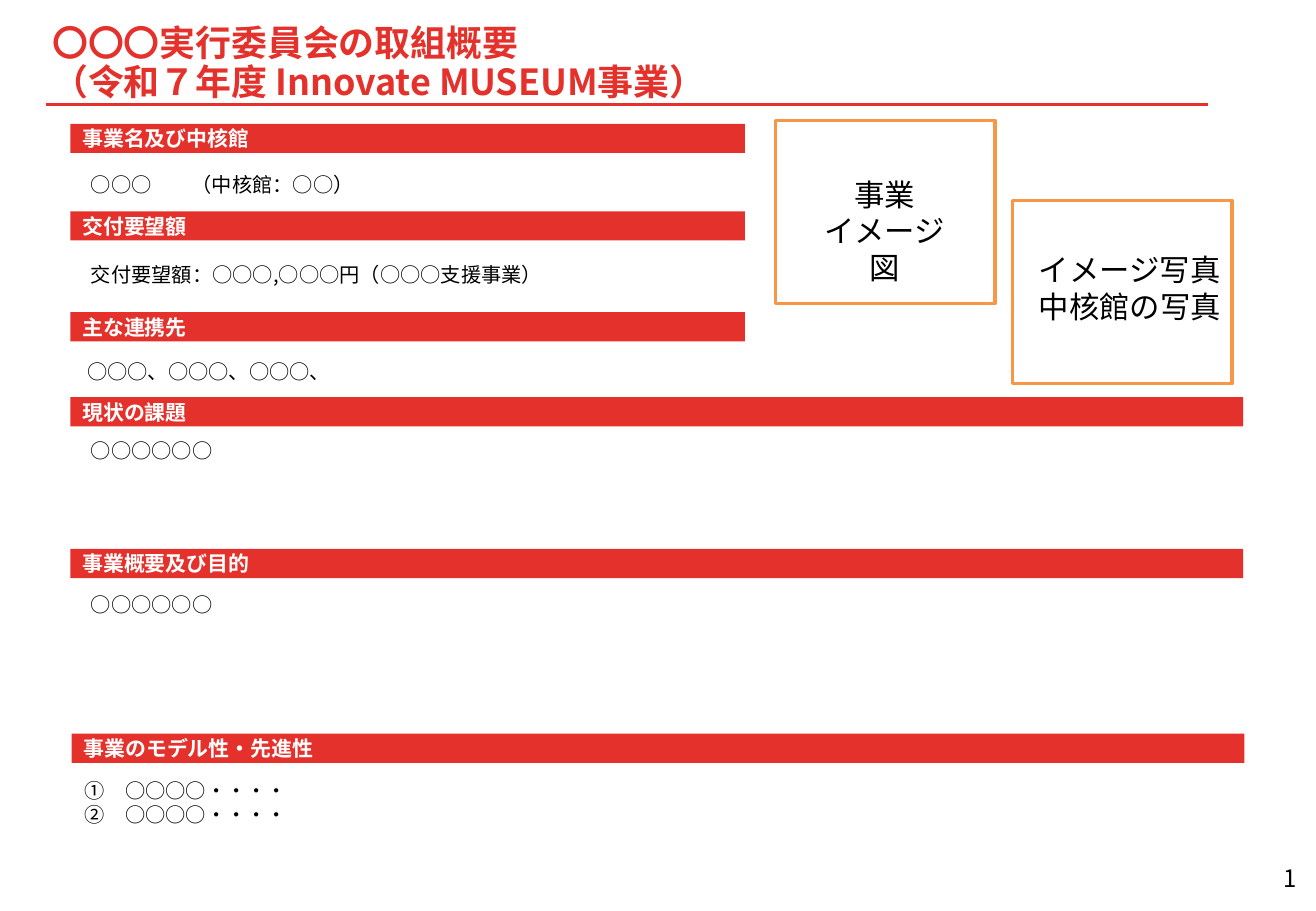
from dataclasses import dataclass

from lxml import etree
from pptx import Presentation
from pptx.dml.color import RGBColor
from pptx.enum.shapes import MSO_CONNECTOR, MSO_SHAPE
from pptx.enum.text import MSO_ANCHOR, MSO_AUTO_SIZE, PP_ALIGN
from pptx.oxml.ns import qn
from pptx.util import Inches, Pt


@dataclass(frozen=True)
class Theme:
    red: RGBColor = RGBColor(0xE4, 0x31, 0x2B)
    orange: RGBColor = RGBColor(0xF7, 0x96, 0x46)
    white: RGBColor = RGBColor(0xFF, 0xFF, 0xFF)
    black: RGBColor = RGBColor(0, 0, 0)
    font: str = "Noto Sans CJK JP"
    caption_font: str = "Arial"
    title_size: float = 21.3
    heading_size: float = 12.4
    body_size: float = 12
    caption_size: float = 18
    number_size: float = 14.2
    line_width: float = 2


theme = Theme()


def write(shape, text, size, color=theme.black, bold=False,
          align=PP_ALIGN.LEFT, latin=theme.font):
    """Fill a shape with text and format every run, Japanese font included."""
    frame = shape.text_frame
    frame.word_wrap = True
    frame.text = text
    for paragraph in frame.paragraphs:
        paragraph.alignment = align
        for run in paragraph.runs:
            font = run.font
            font.size, font.bold, font.name = Pt(size), bold, latin
            font.color.rgb = color
            east_asian = etree.SubElement(run._r.get_or_add_rPr(), qn("a:ea"))
            east_asian.set("typeface", theme.font)
    return frame


def set_insets(frame, left=0):
    frame.margin_left = Inches(left)
    frame.margin_top = frame.margin_right = frame.margin_bottom = 0


presentation = Presentation()
presentation.slide_width = Inches(10.83)
presentation.slide_height = Inches(7.5)
slide = presentation.slides.add_slide(presentation.slide_layouts[5])
shapes = slide.shapes

# Title and rule
rule = shapes.add_connector(MSO_CONNECTOR.STRAIGHT, Inches(0.38), Inches(0.86),
                            Inches(9.94), Inches(0.86))
rule.line.color.rgb = theme.red
rule.line.width = Pt(theme.line_width)
etree.SubElement(rule._element.spPr, qn("a:effectLst"))

title = shapes.title
title.left, title.top = Inches(0.43), Inches(0.21)
title.width, title.height = Inches(9.39), Inches(0.64)
title_frame = write(title, "〇〇〇実行委員会の取組概要\n（令和７年度 Innovate MUSEUM事業）",
                    theme.title_size, theme.red, bold=True)
set_insets(title_frame)
title_frame.auto_size = MSO_AUTO_SIZE.NONE
title_frame.vertical_anchor = MSO_ANCHOR.MIDDLE
for paragraph in title_frame.paragraphs:
    paragraph.line_spacing = 0.9

# Section bars: heading, left, top, width
half_width, full_width = 5.55, 9.65
for heading, left, top, width in [
    ("事業名及び中核館", 0.58, 1.02, half_width),
    ("交付要望額", 0.58, 1.74, half_width),
    ("主な連携先", 0.58, 2.57, half_width),
    ("現状の課題", 0.58, 3.27, full_width),
    ("事業概要及び目的", 0.58, 4.52, full_width),
    ("事業のモデル性・先進性", 0.59, 6.04, full_width),
]:
    bar = shapes.add_shape(MSO_SHAPE.RECTANGLE, Inches(left), Inches(top),
                           Inches(width), Inches(0.24))
    bar.shadow.inherit = False
    bar.fill.solid()
    bar.fill.fore_color.rgb = theme.red
    bar.line.fill.background()
    bar_frame = write(bar, heading, theme.heading_size, theme.white, bold=True)
    set_insets(bar_frame, left=0.1)
    bar_frame.vertical_anchor = MSO_ANCHOR.MIDDLE

# Section texts: text, left, top, width, height
for text, left, top, width, height in [
    ("○○○\t（中核館：○○）", 0.65, 1.37, 5.73, 0.3),
    ("交付要望額：○○○,○○○円（○○○支援事業）", 0.65, 2.11, 8.55, 0.3),
    ("○○○、○○○、○○○、", 0.62, 2.91, 9.04, 0.3),
    ("○○○○○○", 0.65, 3.56, 9.55, 0.3),
    ("○○○○○○", 0.65, 4.83, 9.55, 0.3),
    ("①　○○○○・・・・\n②　○○○○・・・・", 0.6, 6.36, 9.55, 0.5),
]:
    box = shapes.add_textbox(Inches(left), Inches(top), Inches(width), Inches(height))
    box_frame = write(box, text, theme.body_size)
    if "\t" in text:
        properties = box_frame.paragraphs[0]._p.get_or_add_pPr()
        tabs = etree.SubElement(properties, qn("a:tabLst"))
        etree.SubElement(tabs, qn("a:tab"), pos=str(Inches(0.83)), algn="l")

# Image frames, then their captions
for left, top in [(6.38, 0.99), (8.33, 1.65)]:
    image_frame = shapes.add_shape(MSO_SHAPE.RECTANGLE, Inches(left), Inches(top),
                                   Inches(1.81), Inches(1.51))
    image_frame.shadow.inherit = False
    image_frame.fill.solid()
    image_frame.fill.fore_color.rgb = theme.white
    image_frame.line.color.rgb = theme.orange
    image_frame.line.width = Pt(theme.line_width)

for text, left, top, width, align in [
    ("事業\nイメージ図", 6.59, 1.4, 1.38, PP_ALIGN.CENTER),
    ("イメージ写真\n中核館の写真", 8.45, 2.02, 1.81, PP_ALIGN.LEFT),
]:
    caption = shapes.add_textbox(Inches(left), Inches(top), Inches(width), Inches(0.71))
    write(caption, text, theme.caption_size, align=align, latin=theme.caption_font)

# Page number
page_number = shapes.add_textbox(Inches(10.45), Inches(7.14), Inches(0.22), Inches(0.21))
number_frame = write(page_number, "1", theme.number_size, align=PP_ALIGN.RIGHT)
set_insets(number_frame)
number_frame.word_wrap = False
number_frame.vertical_anchor = MSO_ANCHOR.BOTTOM

presentation.save("out.pptx")
